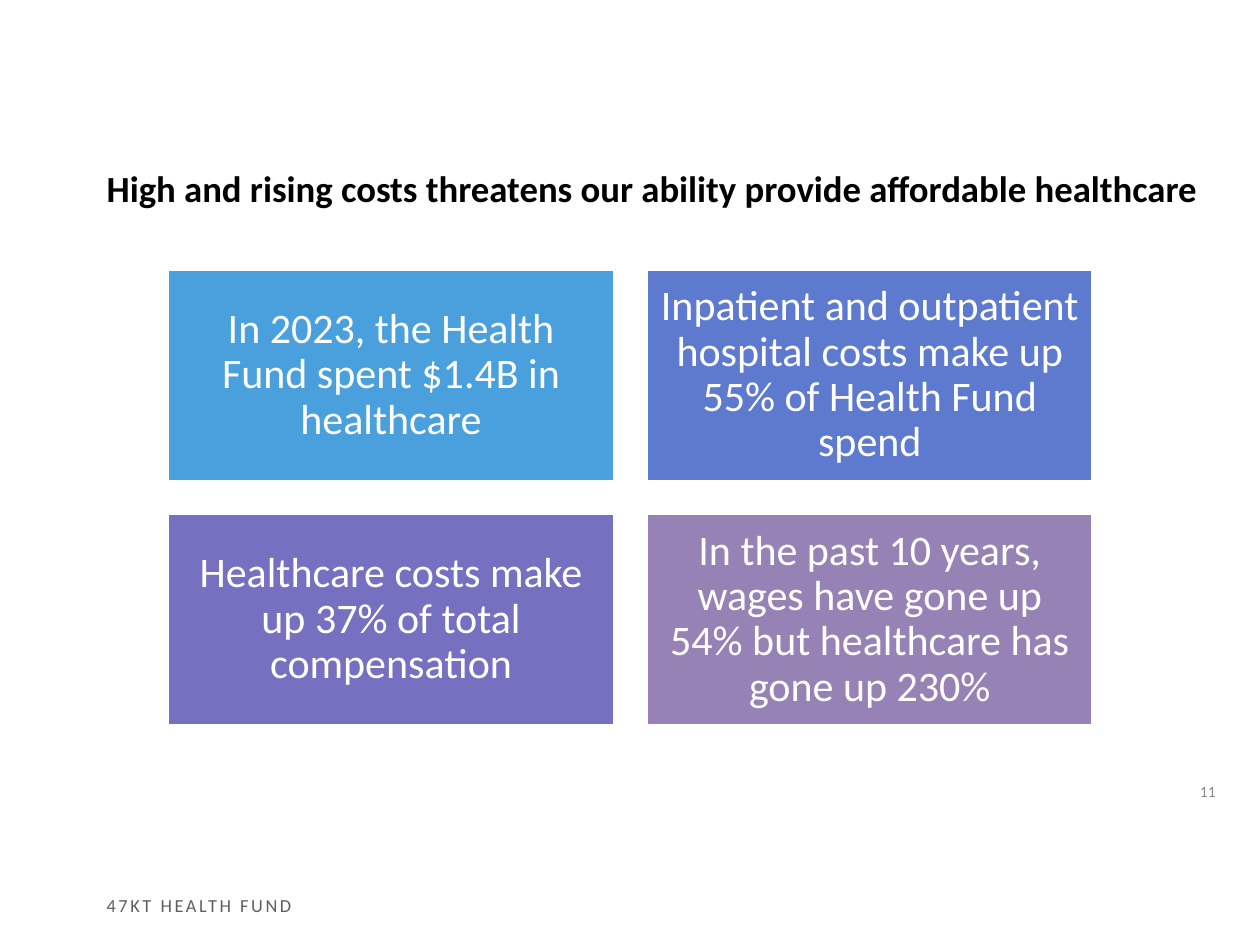
import pptx
import pptx.dml.color
import pptx.enum.shapes
import pptx.enum.text
import pptx.util
from pptx.dml.color import RGBColor
from pptx.enum.text import MSO_ANCHOR, PP_ALIGN
from pptx.util import Cm

BLACK = RGBColor(0x00, 0x00, 0x00)
WHITE = RGBColor(0xFF, 0xFF, 0xFF)
DARK_GRAY = RGBColor(0x5E, 0x5E, 0x5E)
LIGHT_GRAY = RGBColor(0x8C, 0x8C, 0x8C)
SKY = RGBColor(0x49, 0xA0, 0xDD)
BLUE = RGBColor(0x5D, 0x7A, 0xCF)
VIOLET = RGBColor(0x76, 0x70, 0xC1)
MAUVE = RGBColor(0x96, 0x82, 0xB4)

FACTS = [
    ("In 2023, the Health Fund spent $1.4B in healthcare", SKY),
    ("Inpatient and outpatient hospital costs make up 55% of Health Fund spend", BLUE),
    ("Healthcare costs make up 37% of total compensation", VIOLET),
    ("In the past 10 years, wages have gone up 54% but healthcare has gone up 230%", MAUVE),
]


def write_text(shape, text, size, color, bold=False, align=PP_ALIGN.LEFT,
               anchor=MSO_ANCHOR.MIDDLE, line_spacing=1.0, tracking=0, wrap=True):
    """Write one formatted paragraph into a shape."""
    frame = shape.text_frame
    frame.word_wrap = wrap
    frame.vertical_anchor = anchor
    paragraph = frame.paragraphs[0]
    paragraph.alignment = align
    paragraph.line_spacing = line_spacing
    run = paragraph.add_run()
    run.text = text
    run.font.name = "Calibri"
    run.font.size = pptx.util.Pt(size)
    run.font.bold = bold
    run.font.color.rgb = color
    if tracking:
        run.font._element.set("spc", str(int(tracking * 100)))


def add_label(slide, box, text, **text_format):
    """Add a text box that fills the given box."""
    shape = slide.shapes.add_textbox(*box)
    write_text(shape, text, **text_format)


def add_fact_card(slide, box, text, fill):
    """Add one filled card with centred text."""
    card = slide.shapes.add_shape(pptx.enum.shapes.MSO_SHAPE.RECTANGLE, *box)
    card.shadow.inherit = False
    card.fill.solid()
    card.fill.fore_color.rgb = fill
    card.line.color.rgb = WHITE
    card.line.width = pptx.util.Pt(1)
    frame = card.text_frame
    frame.margin_left = frame.margin_right = Cm(0.25)
    frame.margin_top = frame.margin_bottom = Cm(0.25)
    write_text(card, text, size=24, color=WHITE, align=PP_ALIGN.CENTER, line_spacing=0.9)


def add_fact_grid(slide, box, facts, columns=2, gap=Cm(0.68)):
    """Lay out the fact cards in equal cells inside the given box."""
    left, top, width, height = box
    rows = len(facts) // columns
    card_width = (width - gap * (columns - 1)) // columns
    card_height = (height - gap * (rows - 1)) // rows
    for index, (text, fill) in enumerate(facts):
        row, column = divmod(index, columns)
        card_box = (left + column * (card_width + gap), top + row * (card_height + gap),
                    card_width, card_height)
        add_fact_card(slide, card_box, text, fill)


def build_slide(presentation):
    """Place the title, fact grid, page number and footer."""
    slide = presentation.slides.add_slide(presentation.slide_layouts[6])
    add_label(slide, (Cm(1.9), Cm(17.88), Cm(4.32), Cm(0.71)), "47KT HEALTH FUND",
              size=10.5, color=DARK_GRAY, anchor=MSO_ANCHOR.BOTTOM, tracking=1.5, wrap=False)
    add_label(slide, (Cm(1.9), Cm(3.25), Cm(22.86), Cm(1.2)),
              "High and rising costs threatens our ability provide affordable healthcare",
              size=21, color=BLACK, bold=True, line_spacing=0.9)
    add_fact_grid(slide, (Cm(3.4), Cm(5.44), Cm(18.62), Cm(9.17)), FACTS)
    add_label(slide, (Cm(23.8), Cm(15.57), Cm(0.96), Cm(0.76)), "11",
              size=9, color=LIGHT_GRAY, align=PP_ALIGN.RIGHT)


def main():
    """Build and save the presentation."""
    presentation = pptx.Presentation()
    presentation.slide_width = Cm(25.4)
    presentation.slide_height = Cm(19.05)
    build_slide(presentation)
    presentation.save("out.pptx")


if __name__ == "__main__":
    main()
